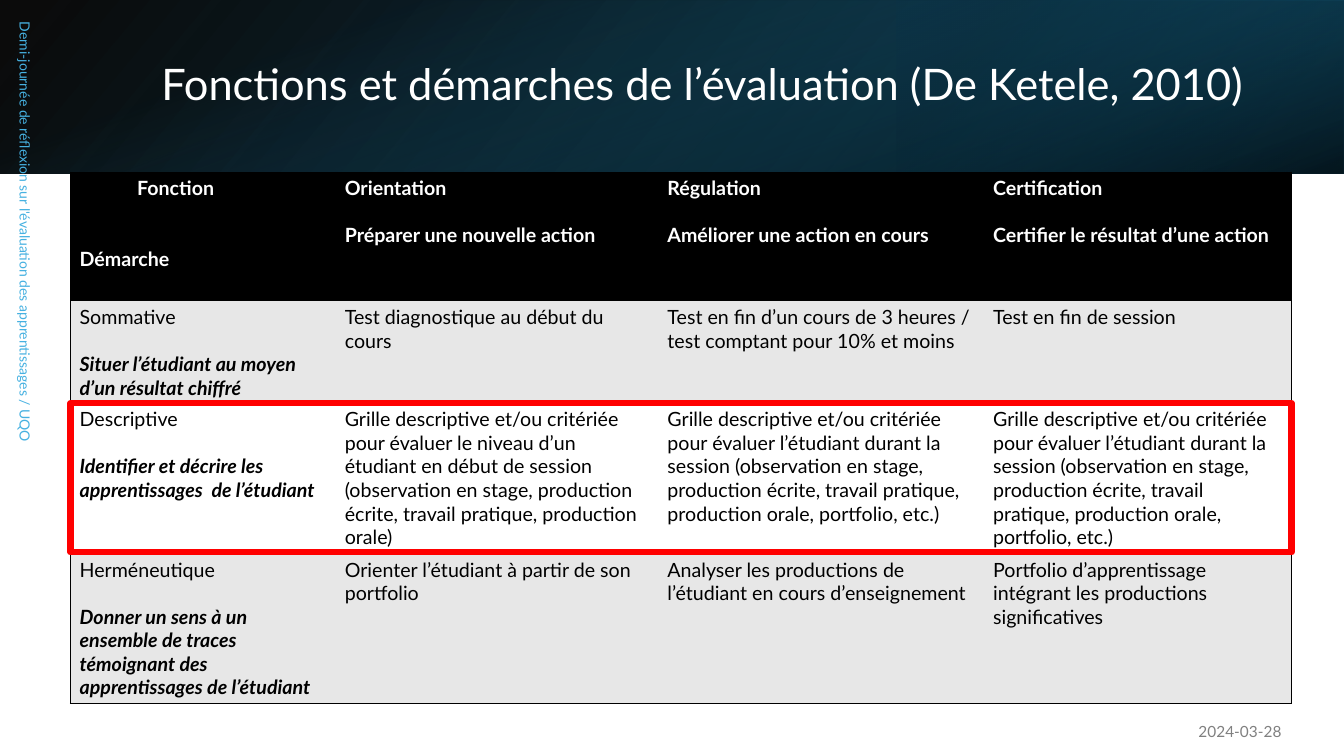
"""Build the slide on the functions and approaches of assessment."""
from lxml.etree import SubElement
from pptx import Presentation
from pptx.dml.color import RGBColor as RGB
from pptx.enum.shapes import MSO_SHAPE as SHAPE
from pptx.enum.text import MSO_ANCHOR as ANCHOR, PP_ALIGN as ALIGN
from pptx.oxml import parse_xml
from pptx.oxml.ns import nsdecls, qn
from pptx.util import Inches, Pt


def color(value):
    return RGB.from_string(value)


def write(p, text, size=14, c="000000", bold=False, italic=False,
          align=ALIGN.LEFT, after=0):
    p.alignment, p.space_before, p.space_after = align, Pt(0), Pt(after)
    r = p.add_run()
    r.text = text
    f = r.font
    f.name, f.size, f.bold, f.italic = "Lato", Pt(size), bold, italic
    f.color.rgb = color(c)


prs = Presentation()
prs.slide_width, prs.slide_height = Inches(13.33), Inches(7.5)
s = prs.slides.add_slide(prs.slide_layouts[5])

bands = [
    ((0, 0, 13.33, 1.72), 0, True, 140,
     [(0, "000000", 96), (100, "104862", 100)]),
    ((8.89, 0, 4.44, 1.72), 180, True, 320,
     [(19, "0B3041", 68), (100, "156082", 79)]),
    ((5.8, -5.8, 1.72, 13.33), 90, False, 340,
     [(23, "156082", 0), (99, "000000", 74)]),
]
for box, rotation, flip, angle, stops in bands:
    sp = s.shapes.add_shape(SHAPE.RECTANGLE, *map(Inches, box))
    sp.rotation = rotation
    sp.shadow.inherit = False
    sp.line.fill.background()
    if flip:
        sp._element.spPr.find(qn("a:xfrm")).set("flipH", "1")
    gs = "".join(
        f'<a:gs pos="{pos * 1000}"><a:srgbClr val="{c}">'
        f'<a:alpha val="{alpha * 1000}"/></a:srgbClr></a:gs>'
        for pos, c, alpha in stops)
    sp._element.spPr.find(qn("a:prstGeom")).addnext(parse_xml(
        f'<a:gradFill {nsdecls("a")} rotWithShape="1"><a:gsLst>{gs}</a:gsLst>'
        f'<a:lin ang="{angle * 60000}" scaled="0"/></a:gradFill>'))

title = s.shapes.title
title.left, title.top = Inches(1.5), Inches(0.38)
title.width, title.height = Inches(10.98), Inches(0.96)
tf = title.text_frame
tf.vertical_anchor = ANCHOR.MIDDLE
p = tf.paragraphs[0]
p.line_spacing = 0.9
write(p, "Fonctions et démarches de l’évaluation (De Ketele, 2010)",
      size=31, c="FFFFFF")
s.shapes._spTree.append(title._element)

footers = [
    ("Demi-journée de réflexion sur l'évaluation des apprentissages / UQO",
     (-2, 2.17, 4.5, 0.4), 90, dict(size=10, c="46B1E1")),
    ("2024-03-28", (9.81, 7.06, 3, 0.4), 0,
     dict(size=11, c="808080", align=ALIGN.RIGHT)),
]
for text, box, rotation, fmt in footers:
    sp = s.shapes.add_textbox(*map(Inches, box))
    sp.rotation = rotation
    tf = sp.text_frame
    tf.word_wrap = True
    tf.vertical_anchor = ANCHOR.MIDDLE
    write(tf.paragraphs[0], text, after=6, **fmt)

grid = "Grille descriptive et/ou critériée pour évaluer "
during = grid + ("l’étudiant durant la session (observation en stage, production "
                 "écrite, travail pratique, production orale, portfolio, etc.)")
rows = [
    [("Fonction", "Démarche"),
     ("Orientation", "Préparer une nouvelle action"),
     ("Régulation", "Améliorer une action en cours"),
     ("Certification", "Certifier le résultat d’une action")],
    [("Sommative", "Situer l’étudiant au moyen d’un résultat chiffré"),
     ("Test diagnostique au début du cours",),
     ("Test en fin d’un cours de 3 heures / test comptant pour 10% et moins",),
     ("Test en fin de session",)],
    [("Descriptive", "Identifier et décrire les apprentissages  de l’étudiant"),
     (grid + "le niveau d’un étudiant en début de session (observation en "
      "stage, production écrite, travail pratique, production orale)",),
     (during,),
     (during,)],
    [("Herméneutique", "Donner un sens à un ensemble de traces témoignant des "
      "apprentissages de l’étudiant"),
     ("Orienter l’étudiant à partir de son portfolio",),
     ("Analyser les productions de l’étudiant en cours d’enseignement",),
     ("Portfolio d’apprentissage intégrant les productions significatives",)],
]
widths = [2.63, 3.2, 3.23, 3.05]
heights = [1.28, 1.01, 1.49, 1.49]
fills = ["000000", "E7E7E7", "FFFFFF", "E7E7E7"]
line_height = 16.8

frame = s.shapes.add_table(4, 4, Inches(0.7), Inches(1.71),
                           Inches(sum(widths)), Inches(sum(heights)))
table = frame.table
style = table._tbl.tblPr.find(qn("a:tableStyleId"))
style.text = "{2D5ABB26-0587-4C30-8999-92F81FD0307C}"
for col, width in zip(table.columns, widths):
    col.width = Inches(width)
for i, texts in enumerate(rows):
    table.rows[i].height = Inches(heights[i])
    for j, lines in enumerate(texts):
        cell = table.cell(i, j)
        cell.margin_left = cell.margin_right = Inches(0.09)
        cell.margin_top = cell.margin_bottom = Inches(0.04)
        edges = [("lnL", j == 0), ("lnR", j == 3),
                 ("lnT", i == 0), ("lnB", i == 3)]
        for tag, outer in edges:
            if outer:
                ln = SubElement(cell._tc.get_or_add_tcPr(), qn(f"a:{tag}"),
                                w=str(Pt(1)))
                SubElement(SubElement(ln, qn("a:solidFill")),
                           qn("a:srgbClr"), val="000000")
        cell.fill.solid()
        cell.fill.fore_color.rgb = color(fills[i])
        tf = cell.text_frame
        header, corner = i == 0, i == j == 0
        gap = line_height * (2 if corner else 1)
        for k, text in enumerate(lines):
            p = tf.add_paragraph() if k else tf.paragraphs[0]
            write(p, text, c="FFFFFF" if header else "000000",
                  bold=header or k == 1, italic=not header and k == 1,
                  after=gap if k < len(lines) - 1 else 0)
        if corner:
            tf.paragraphs[0]._p.get_or_add_pPr().set("marL", str(Inches(0.57)))

sp = s.shapes.add_shape(SHAPE.RECTANGLE, Inches(0.7), Inches(4),
                        Inches(sum(widths)), Inches(1.48))
sp.shadow.inherit = False
sp.fill.background()
sp.line.color.rgb = color("FF0000")
sp.line.width = Pt(4.5)

prs.save("out.pptx")
